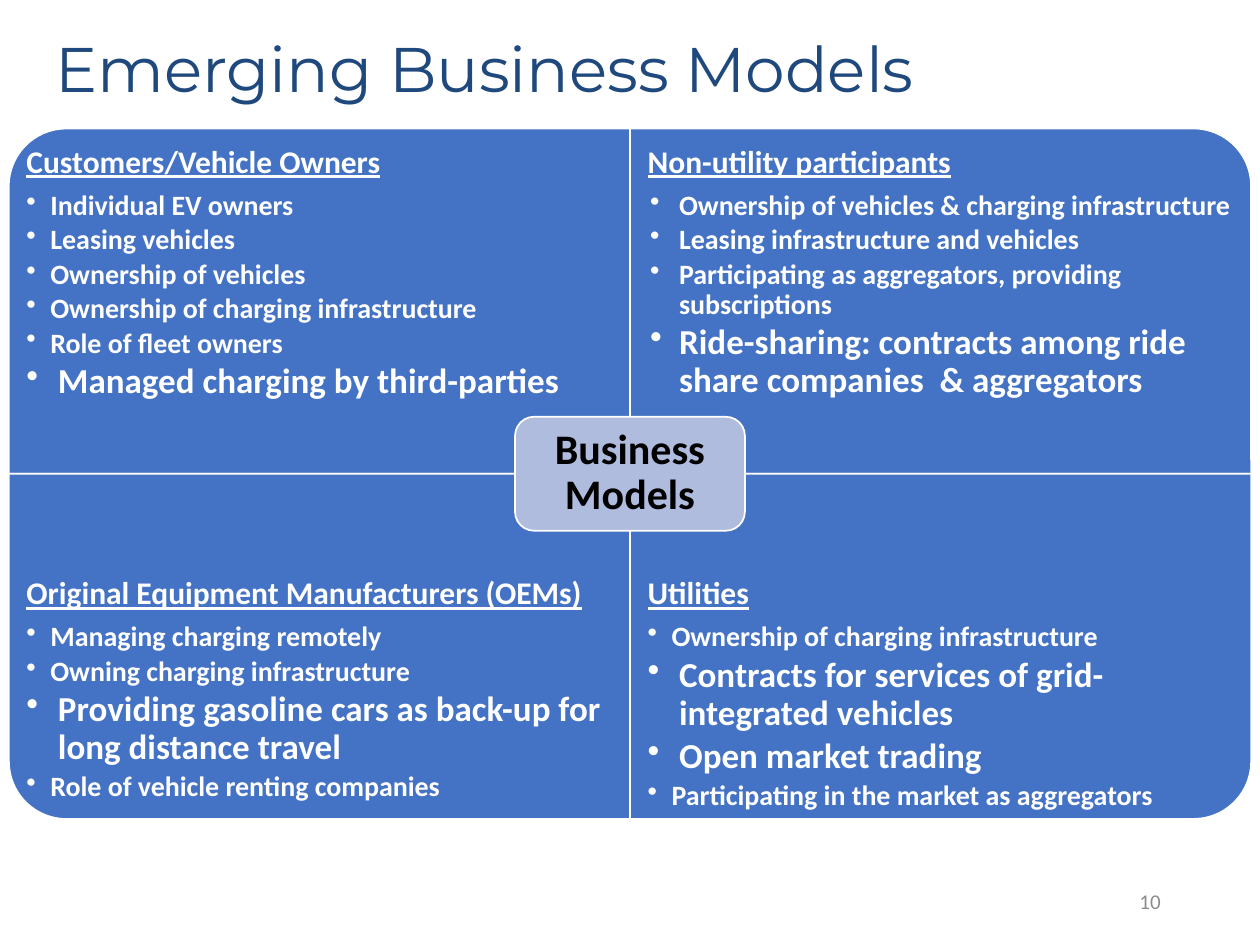
from dataclasses import dataclass

from lxml.etree import SubElement
from pptx import Presentation
from pptx.dml.color import RGBColor as RGB
from pptx.enum.shapes import MSO_SHAPE as SHAPE
from pptx.enum.text import MSO_ANCHOR as ANCHOR, PP_ALIGN as ALIGN
from pptx.oxml.ns import qn
from pptx.util import Inches, Pt


@dataclass(frozen=True)
class Theme:
    navy: RGB = RGB(0x1F, 0x49, 0x7D)
    blue: RGB = RGB(0x44, 0x72, 0xC4)
    lavender: RGB = RGB(0xB0, 0xBC, 0xDE)
    white: RGB = RGB(0xFF, 0xFF, 0xFF)
    black: RGB = RGB(0, 0, 0)
    gray: RGB = RGB(0x8C, 0x8C, 0x8C)
    title_font: str = "Montserrat"
    body_font: str = "Calibri"
    title: int = 36
    hub: int = 24
    large: int = 20
    heading: int = 18
    item: int = 16
    number: int = 12


theme = Theme()
deck = Presentation()
deck.slide_width, deck.slide_height = Inches(10), Inches(7.5)
slide = deck.slides.add_slide(deck.slide_layouts[6])

# Grid: two columns by two rows around a central hub
LEFT, TOP, COL, ROW = 0.07, 1.02, 4.93, 2.74
CENTER_X, CENTER_Y = LEFT + COL, TOP + ROW
LIST_H = ROW * 0.75


def add_panel(kind, center_x, center_y, width, height, color, rotation=0):
    panel = slide.shapes.add_shape(kind, Inches(center_x - width / 2),
                                   Inches(center_y - height / 2), Inches(width), Inches(height))
    panel.rotation = rotation
    panel.shadow.inherit = False
    panel.fill.solid()
    panel.fill.fore_color.rgb = color
    panel.line.color.rgb = theme.white
    panel.line.width = Pt(1)


def add_text(text, at, size, color, font=theme.body_font, bold=False, underline=False,
             align=ALIGN.LEFT, anchor=ANCHOR.MIDDLE, inset=(0.1, 0.05), spacing=0.9,
             after=0, bullets=(), hang=None):
    """Write one paragraph, then any (text, size) bullets below it."""
    frame = slide.shapes.add_textbox(*map(Inches, at)).text_frame
    frame.word_wrap = True
    frame.vertical_anchor = anchor
    frame.margin_left = frame.margin_right = Inches(inset[0])
    frame.margin_top = frame.margin_bottom = Inches(inset[1])
    for row, (words, points) in enumerate([(text, size), *bullets]):
        paragraph = frame.add_paragraph() if row else frame.paragraphs[0]
        if row:
            paragraph.level = 1
            indent, hanging = hang or ((0.25, 0.25) if points == theme.large else (0.19, 0.19))
            props = paragraph._p.get_or_add_pPr()
            props.set("marL", str(Inches(indent)))
            props.set("indent", str(-Inches(hanging)))
            SubElement(props, qn("a:buChar")).set("char", "•")
        paragraph.alignment = align
        paragraph.line_spacing = spacing
        paragraph.space_after = Pt(points * (0.15 if row else after))
        run = paragraph.add_run()
        run.text = words
        run.font.name, run.font.size = font, Pt(points)
        run.font.bold, run.font.underline = bold, underline and not row
        run.font.color.rgb = color


# Title
add_text("Emerging Business Models", (0.34, 0.27, 9.77, 0.6), theme.title, theme.navy,
         font=theme.title_font)

# Quadrants: column, row, rotation, hanging indent, heading, bullets
item, large = theme.item, theme.large
quadrants = [
    (0, 0, 270, None, "Customers/Vehicle Owners", [
        ("Individual EV owners", item),
        ("Leasing vehicles", item),
        ("Ownership of vehicles", item),
        ("Ownership of charging infrastructure", item),
        ("Role of fleet owners", item),
        ("Managed charging by third-parties", large)]),
    (1, 0, 0, (0.25, 0.23), "Non-utility participants", [
        ("Ownership of vehicles & charging infrastructure", item),
        ("Leasing infrastructure and vehicles", item),
        ("Participating as aggregators, providing subscriptions", item),
        ("Ride-sharing: contracts among ride share companies  & aggregators", large)]),
    (0, 1, 180, None, "Original Equipment Manufacturers (OEMs)", [
        ("Managing charging remotely", item),
        ("Owning charging infrastructure", item),
        ("Providing gasoline cars as back-up for long distance travel", large),
        ("Role of vehicle renting companies", item)]),
    (1, 1, 90, None, "Utilities", [
        ("Ownership of charging infrastructure", item),
        ("Contracts for services of grid-integrated vehicles", large),
        ("Open market trading", large),
        ("Participating in the market as aggregators", item)]),
]
for col, row, rotation, hang, heading, bullets in quadrants:
    x, y = LEFT + col * COL, TOP + row * ROW
    width, height = (COL, ROW) if rotation % 180 == 0 else (ROW, COL)
    add_panel(SHAPE.ROUND_1_RECTANGLE, x + COL / 2, y + ROW / 2, width, height,
              theme.blue, rotation)
    add_text(heading, (x, y + row * (ROW - LIST_H), COL, LIST_H), theme.heading, theme.white,
             bold=True, underline=True, anchor=ANCHOR.TOP, inset=(0.14, 0.14),
             after=0.35, bullets=bullets, hang=hang)

# Central hub
add_panel(SHAPE.ROUNDED_RECTANGLE, CENTER_X, CENTER_Y, COL * 0.37, ROW * 0.33, theme.lavender)
add_text("Business Models", (CENTER_X - 0.87, CENTER_Y - 0.41, 1.74, 0.81), theme.hub,
         theme.black, bold=True, align=ALIGN.CENTER, inset=(0.1, 0.1))

# Slide number
add_text("10", (7.06, 6.95, 2.25, 0.4), theme.number, theme.gray, align=ALIGN.RIGHT, spacing=1.0)

deck.save("out.pptx")
